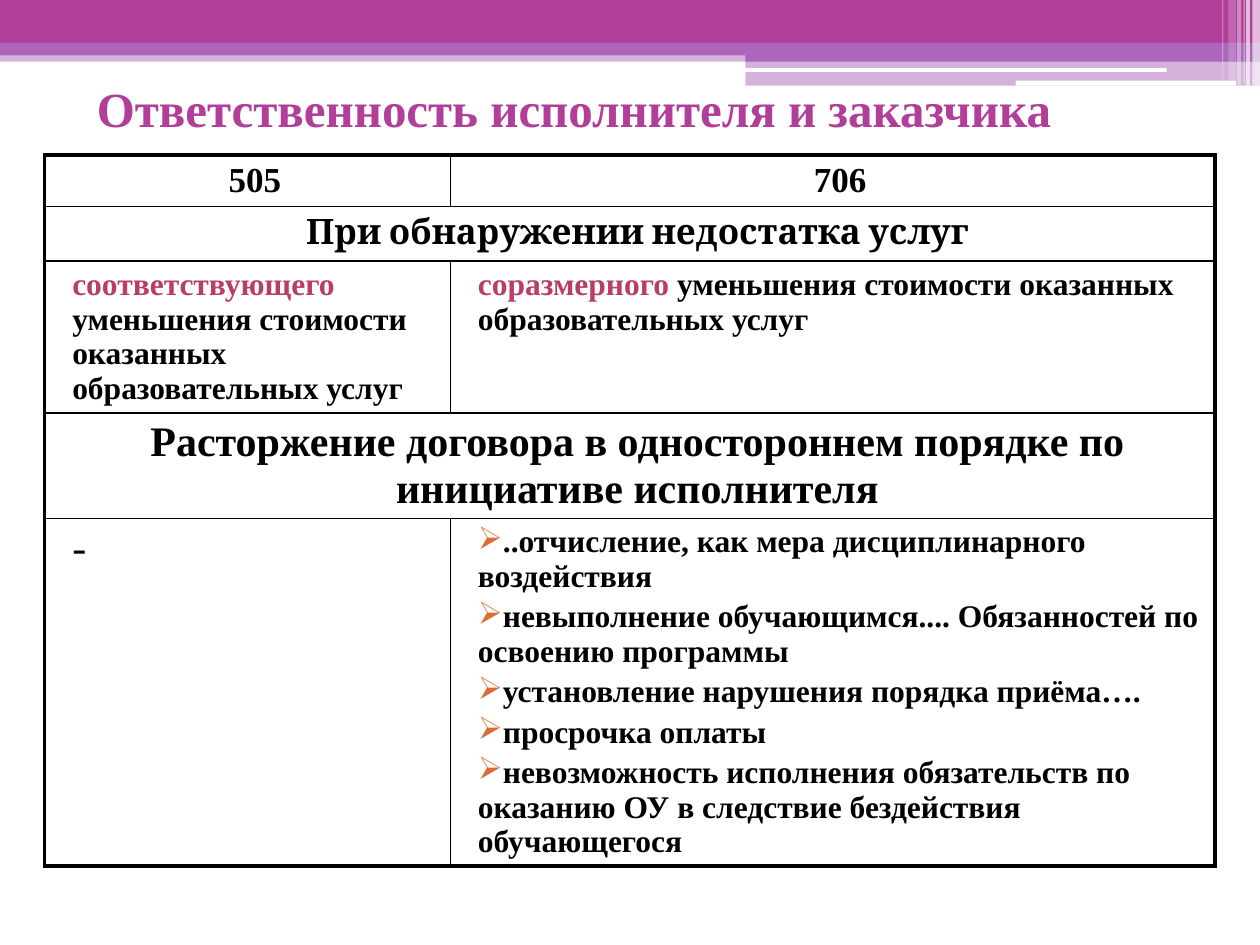
from dataclasses import dataclass

from lxml.etree import SubElement
from pptx import Presentation
from pptx.dml.color import RGBColor
from pptx.enum.shapes import MSO_SHAPE as Preset
from pptx.enum.text import MSO_ANCHOR as Anchor, MSO_AUTO_SIZE as AutoSize, PP_ALIGN as Align
from pptx.oxml.ns import qn
from pptx.util import Pt


@dataclass(frozen=True)
class Theme:
    magenta: str = "B13F9A"
    violet: str = "AC66BB"
    crimson: str = "B83D68"
    orange: str = "DE6C36"
    black: str = "000000"
    white: str = "FFFFFF"
    serif: str = "Times New Roman"
    section_font: str = "Cambria"
    title_size: float = 28
    section_size: float = 24
    head_size: float = 20
    body_size: float = 18
    outer_line: float = 2.25
    inner_line: float = 1


THEME = Theme()
TITLE = "Ответственность исполнителя и заказчика"
REDUCTION = "уменьшения стоимости оказанных образовательных услуг"
TERMINATION_GROUNDS = [
    "..отчисление, как мера дисциплинарного воздействия",
    "невыполнение обучающимся.... Обязанностей по освоению программы",
    "установление нарушения порядка приёма….",
    "просрочка оплаты",
    "невозможность исполнения обязательств по оказанию ОУ в следствие бездействия обучающегося",
]
COLUMN_WIDTHS = [231.8, 437]
ROW_HEIGHTS = [29, 31, 87, 60, 198]
SECTION_ROWS = (1, 3)


def add_text(paragraph, text, *, size=THEME.body_size, color=THEME.black,
             font=THEME.serif, bold=True):
    run = paragraph.add_run()
    run.text = text
    run.font.size = Pt(size)
    run.font.name = font
    run.font.bold = bold
    run.font.color.rgb = RGBColor.from_string(color)


def add_band(slide, left, top, width, height, color, opacity=100, preset=Preset.RECTANGLE):
    band = slide.shapes.add_shape(preset, Pt(left), Pt(top), Pt(width), Pt(height))
    band.shadow.inherit = False
    band.line.fill.background()
    band.fill.solid()
    band.fill.fore_color.rgb = RGBColor.from_string(color)
    if opacity < 100:
        tint = next(band.element.spPr.iter(qn("a:srgbClr")))
        SubElement(tint, qn("a:alpha"), val=str(opacity * 1000))


def add_header(slide):
    add_band(slide, 0, 28.8, 720, 6.5, THEME.violet, 50)
    add_band(slide, 0, 0, 720, 24.5, THEME.magenta)
    add_band(slide, 0, 24.5, 720, 7.2, THEME.violet)
    add_band(slide, 426, 28, 294, 7.2, THEME.violet)
    add_band(slide, 426, 34.6, 294, 14.4, THEME.violet, 50)
    for left, top, width, height in [(425.5, 38.9, 241.2, 2.2), (580.3, 46.1, 126, 2.9)]:
        add_band(slide, left, top, width, height, THEME.white, preset=Preset.ROUNDED_RECTANGLE)
    stripes = [(715.7, 4.3, 49, 65), (712.1, 2.2, 49, 65), (710.6, 0.7, 49, 60),
               (707, 2.2, 49, 40), (702, 4.3, 46, 20), (698.4, 0.7, 46, 30)]
    for left, width, height, opacity in stripes:
        add_band(slide, left, 0, width, height, THEME.white, opacity)


def set_title(slide):
    title = slide.shapes.title
    title.left, title.top, title.width, title.height = Pt(48.2), Pt(0), Pt(635.8), Pt(185.8)
    frame = title.text_frame
    frame.auto_size = AutoSize.NONE
    frame.word_wrap = True
    frame.vertical_anchor = Anchor.MIDDLE
    frame.margin_bottom = Pt(66)
    frame.paragraphs[0].alignment = Align.LEFT
    add_text(frame.paragraphs[0], TITLE, size=THEME.title_size, color=THEME.magenta)
    slide.shapes.element.append(title.element)


def style_paragraph(paragraph, align=Align.LEFT, bullet=None):
    paragraph.alignment = align
    paragraph.space_before = Pt(3)
    properties = paragraph._p.get_or_add_pPr()
    properties.set("marL", str(Pt(8.6)))
    properties.set("indent", "0")
    if bullet:
        tint = SubElement(properties, qn("a:buClr"))
        SubElement(tint, qn("a:srgbClr"), val=THEME.orange)
        SubElement(properties, qn("a:buChar"), char=bullet)
    return paragraph


def first_paragraph(cell, align=Align.LEFT, bullet=None):
    return style_paragraph(cell.text_frame.paragraphs[0], align, bullet)


def set_borders(cell, outer_sides):
    """Draw heavy lines on outer_sides, a subset of the letters LRTB, and thin ones elsewhere."""
    properties = cell._tc.get_or_add_tcPr()
    for side in "LRTB":
        width = THEME.outer_line if side in outer_sides else THEME.inner_line
        line = SubElement(properties, qn(f"a:ln{side}"), w=str(Pt(width)))
        paint = SubElement(line, qn("a:solidFill"))
        SubElement(paint, qn("a:srgbClr"), val=THEME.black)


def add_grid(slide):
    last_row = len(ROW_HEIGHTS) - 1
    frame = slide.shapes.add_table(len(ROW_HEIGHTS), len(COLUMN_WIDTHS), Pt(25.5), Pt(88.6),
                                   Pt(sum(COLUMN_WIDTHS)), Pt(sum(ROW_HEIGHTS)))
    table = frame.table
    table.first_row = table.horz_banding = False
    for column, width in zip(table.columns, COLUMN_WIDTHS):
        column.width = Pt(width)
    for index, (row, height) in enumerate(zip(table.rows, ROW_HEIGHTS)):
        row.height = Pt(height)
        edge = {0: "T", last_row: "B"}.get(index, "")
        for cell, side in zip(row.cells, "LR"):
            across = "LR" if index in SECTION_ROWS else side
            set_borders(cell, across + edge)
            cell.fill.background()
    for index in SECTION_ROWS:
        table.cell(index, 0).merge(table.cell(index, 1))
    return table


def fill_grid(table):
    for column, number in enumerate(["505", "706"]):
        add_text(first_paragraph(table.cell(0, column), Align.CENTER), number,
                 size=THEME.head_size)

    add_text(first_paragraph(table.cell(1, 0), Align.CENTER),
             "При обнаружении недостатка услуг", size=THEME.head_size, font=THEME.section_font)
    add_text(first_paragraph(table.cell(3, 0), Align.CENTER),
             "Расторжение договора в одностороннем порядке по инициативе исполнителя",
             size=THEME.section_size)

    for column, measure in enumerate(["соответствующего ", "соразмерного "]):
        paragraph = first_paragraph(table.cell(2, column))
        add_text(paragraph, measure, color=THEME.crimson)
        add_text(paragraph, REDUCTION)

    add_text(first_paragraph(table.cell(4, 0)), "-", size=THEME.section_size, bold=False)
    grounds = table.cell(4, 1)
    for index, ground in enumerate(TERMINATION_GROUNDS):
        if index:
            paragraph = style_paragraph(grounds.text_frame.add_paragraph(), bullet="➢")
        else:
            paragraph = first_paragraph(grounds, bullet="➢")
        add_text(paragraph, ground)


def main():
    deck = Presentation()
    deck.slide_width, deck.slide_height = Pt(720), Pt(540)
    slide = deck.slides.add_slide(deck.slide_layouts[5])
    add_header(slide)
    set_title(slide)
    fill_grid(add_grid(slide))
    deck.save("out.pptx")


if __name__ == "__main__":
    main()
